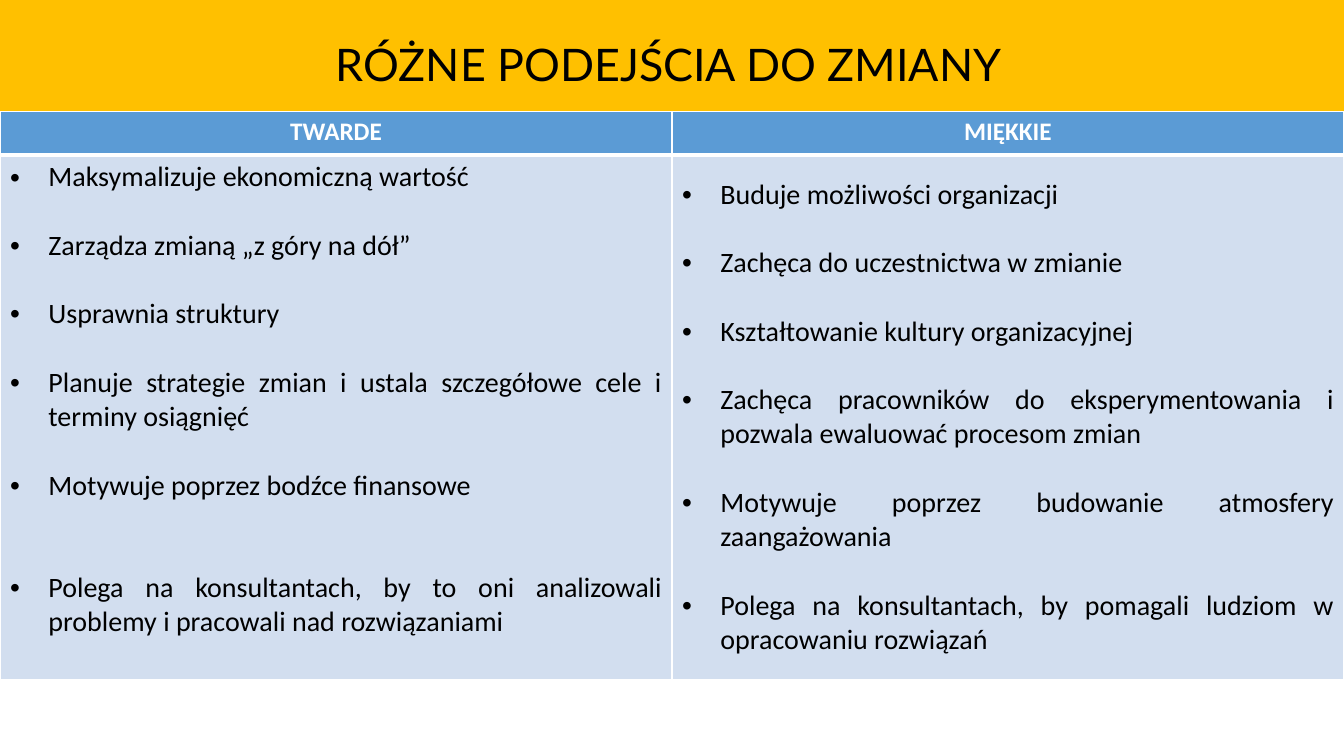
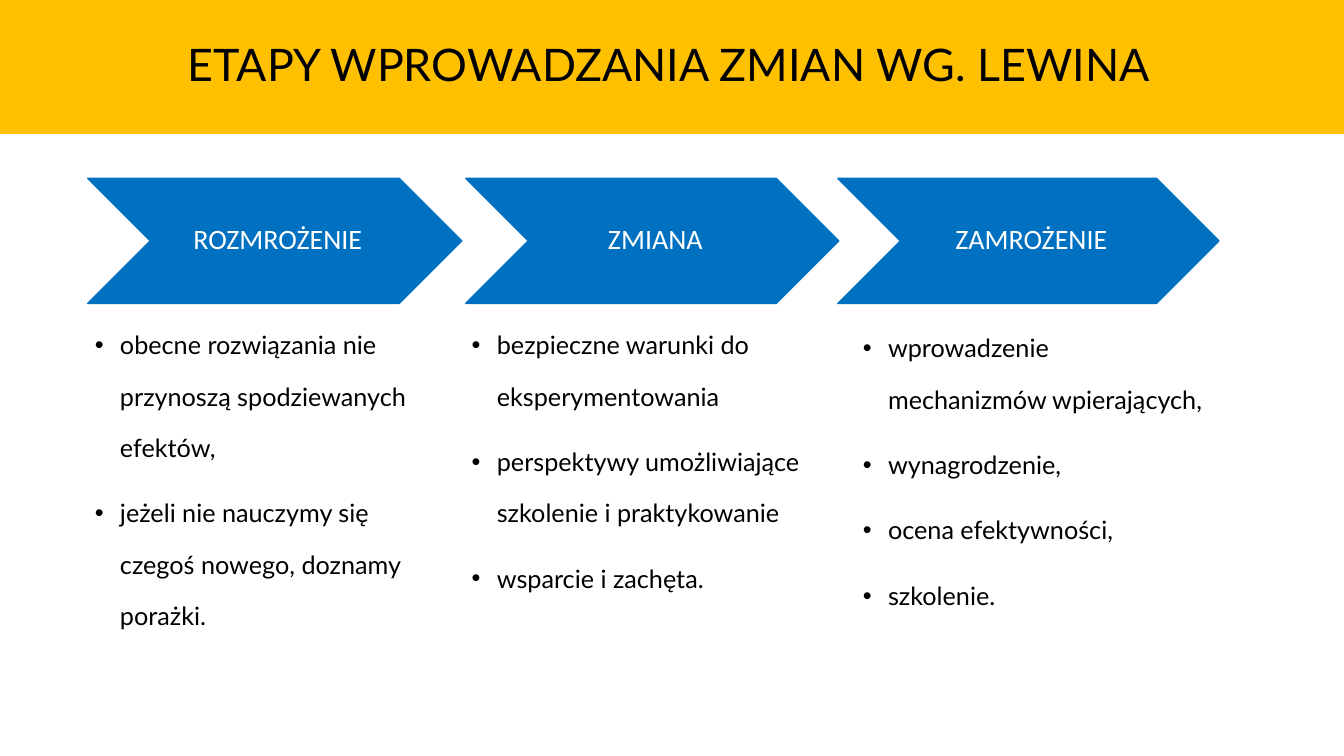
"""Build two slides on approaches to change and the stages of Lewin's model."""
from lxml.etree import SubElement
from pptx import Presentation
from pptx.dml.color import RGBColor
from pptx.enum.shapes import MSO_SHAPE
from pptx.enum.text import MSO_ANCHOR, MSO_AUTO_SIZE, PP_ALIGN
from pptx.oxml import parse_xml
from pptx.oxml.ns import nsdecls, qn
from pptx.util import Inches, Pt

COLORS = {
    "band": "FFC000", "text": "000000", "white": "FFFFFF",
    "header": "5B9BD5", "cell": "D2DEEF", "stage": "0070C0",
}
TITLE_FONT, TABLE_FONT = "Lato", "Calibri"
WIDTH, HEIGHT, BAND_HEIGHT = 13.33, 7.5, 1.33
LINE_GAP = 24.4

APPROACHES = [
    {"name": "TWARDE", "anchor": MSO_ANCHOR.TOP, "points": [
        ("Maksymalizuje ekonomiczną wartość", 1),
        ("Zarządza zmianą „z góry na dół”", 1),
        ("Usprawnia struktury", 1),
        ("Planuje strategie zmian i ustala szczegółowe cele i terminy osiągnięć", 1),
        ("Motywuje poprzez bodźce finansowe", 2),
        ("Polega na konsultantach, by to oni analizowali problemy "
         "i pracowali nad rozwiązaniami", 0),
    ]},
    {"name": "MIĘKKIE", "anchor": MSO_ANCHOR.MIDDLE, "points": [
        ("Buduje możliwości organizacji", 1),
        ("Zachęca do uczestnictwa w zmianie", 1),
        ("Kształtowanie kultury organizacyjnej", 1),
        ("Zachęca pracowników do eksperymentowania i pozwala ewaluować procesom zmian", 1),
        ("Motywuje poprzez budowanie atmosfery zaangażowania", 1),
        ("Polega na konsultantach, by pomagali ludziom w opracowaniu rozwiązań", 0),
    ]},
]
STAGES = [
    {"name": "ROZMROŻENIE", "arrow": (0.87, 3.71), "list": (0.84, 3.01, 3.71, 3.75),
     "points": ["obecne rozwiązania nie przynoszą spodziewanych efektów,",
                "jeżeli nie nauczymy się czegoś nowego, doznamy porażki."]},
    {"name": "ZMIANA", "arrow": (4.62, 3.7), "list": (4.58, 3.01, 3.7, 3.52),
     "points": ["bezpieczne warunki do eksperymentowania",
                "perspektywy umożliwiające szkolenie i praktykowanie",
                "wsparcie i zachęta."]},
    {"name": "ZAMROŻENIE", "arrow": (8.31, 3.78), "list": (8.46, 3.04, 3.63, 3.71),
     "points": ["wprowadzenie mechanizmów wpierających,", "wynagrodzenie,",
                "ocena efektywności,", "szkolenie."]},
]


def color(name):
    return RGBColor.from_string(COLORS[name])


def paint(target, name):
    target.fill.solid()
    target.fill.fore_color.rgb = color(name)


def place(shape, left, top, width, height):
    shape.left, shape.top = Inches(left), Inches(top)
    shape.width, shape.height = Inches(width), Inches(height)


def style(para, font, size, ink, align=None, bold=False):
    para.alignment = align
    para.font.name, para.font.size, para.font.bold = font, Pt(size), bold
    para.font.color.rgb = color(ink)


def add_bullet(para, indent):
    props = para._p.get_or_add_pPr()
    props.set("marL", str(Inches(indent)))
    props.set("indent", str(-Inches(indent)))
    SubElement(props, qn("a:buFont")).set("typeface", "Arial")
    SubElement(props, qn("a:buChar")).set("char", "•")


def paragraphs(frame, texts):
    for number, text in enumerate(texts):
        para = frame.paragraphs[0] if number == 0 else frame.add_paragraph()
        para.text = text
        yield number, para


def set_borders(cell, bottom):
    props = cell._tc.get_or_add_tcPr()
    for index, (side, points) in enumerate(zip("LRTB", (1, 1, 1, bottom))):
        props.insert(index, parse_xml(
            f'<a:ln{side} {nsdecls("a")} w="{Pt(points)}"><a:solidFill>'
            f'<a:srgbClr val="{COLORS["white"]}"/></a:solidFill></a:ln{side}>'))


def add_page(deck, layout, title):
    page = deck.slides.add_slide(deck.slide_layouts.get_by_name(layout))
    box = page.shapes.title
    place(box, 0.4, 0, 12.47, BAND_HEIGHT)
    frame = box.text_frame
    frame.text = title
    frame.auto_size = MSO_AUTO_SIZE.NONE
    frame.vertical_anchor = MSO_ANCHOR.MIDDLE
    para = frame.paragraphs[0]
    para.line_spacing = 0.9
    style(para, TITLE_FONT, 32, "text", PP_ALIGN.CENTER)
    return page


def add_master_band(deck, page):
    band = page.shapes.add_shape(
        MSO_SHAPE.RECTANGLE, 0, 0, Inches(WIDTH), Inches(BAND_HEIGHT))
    band.shadow.inherit = False
    paint(band, "band")
    band.line.fill.background()
    deck.slide_master.shapes.element.insert(2, band.element)


def add_approaches(page):
    row_heights = (0.43, 5.2)
    table = page.shapes.add_table(
        2, len(APPROACHES), 0, Inches(1.11), Inches(WIDTH), Inches(sum(row_heights))).table
    table.horz_banding = False
    for row, height in zip(table.rows, row_heights):
        row.height = Inches(height)
    for column, approach in enumerate(APPROACHES):
        header, body = table.cell(0, column), table.cell(1, column)
        header.text = approach["name"]
        style(header.text_frame.paragraphs[0], TABLE_FONT, 18, "white", PP_ALIGN.CENTER, True)
        body.vertical_anchor = approach["anchor"]
        points = approach["points"]
        for number, para in paragraphs(body.text_frame, [text for text, _ in points]):
            add_bullet(para, 0.38)
            para.space_after = Pt(LINE_GAP * points[number][1])
            style(para, TABLE_FONT, 20, "text", PP_ALIGN.JUSTIFY)
        for cell, fill, bottom in ((header, "header", 3), (body, "cell", 1)):
            paint(cell, fill)
            set_borders(cell, bottom)


def add_arrow(page, name, left, width):
    arrow = page.shapes.add_shape(
        MSO_SHAPE.CHEVRON, Inches(left), Inches(1.77), Inches(width), Inches(1.24))
    arrow.shadow.inherit = False
    paint(arrow, "stage")
    arrow.line.color.rgb = color("stage")
    arrow.line.width = Pt(1)
    frame = arrow.text_frame
    frame.margin_left = Inches(0.09)
    frame.margin_top = frame.margin_right = frame.margin_bottom = Inches(0.03)
    frame.vertical_anchor = MSO_ANCHOR.MIDDLE
    frame.text = name
    para = frame.paragraphs[0]
    para.line_spacing = 0.9
    style(para, TABLE_FONT, 20, "white", PP_ALIGN.CENTER)


def add_stages(page):
    for index, stage in enumerate(STAGES):
        add_arrow(page, stage["name"], *stage["arrow"])
        box = page.placeholders[1] if index == 0 else page.shapes.add_textbox(0, 0, 0, 0)
        place(box, *stage["list"])
        frame = box.text_frame
        frame.word_wrap = True
        frame.auto_size = MSO_AUTO_SIZE.NONE
        for number, para in paragraphs(frame, stage["points"]):
            add_bullet(para, 0.25)
            para.line_spacing = 1.7
            para.space_before = Pt(10 if number else 0)
            style(para, TITLE_FONT, 18, "text", PP_ALIGN.LEFT)


def main():
    deck = Presentation()
    deck.slide_width, deck.slide_height = Inches(WIDTH), Inches(HEIGHT)
    page = add_page(deck, "Title Only", "RÓŻNE PODEJŚCIA DO ZMIANY")
    add_master_band(deck, page)
    add_approaches(page)
    add_stages(add_page(deck, "Title and Content", "ETAPY WPROWADZANIA ZMIAN WG. LEWINA"))
    deck.save("out.pptx")


if __name__ == "__main__":
    main()
